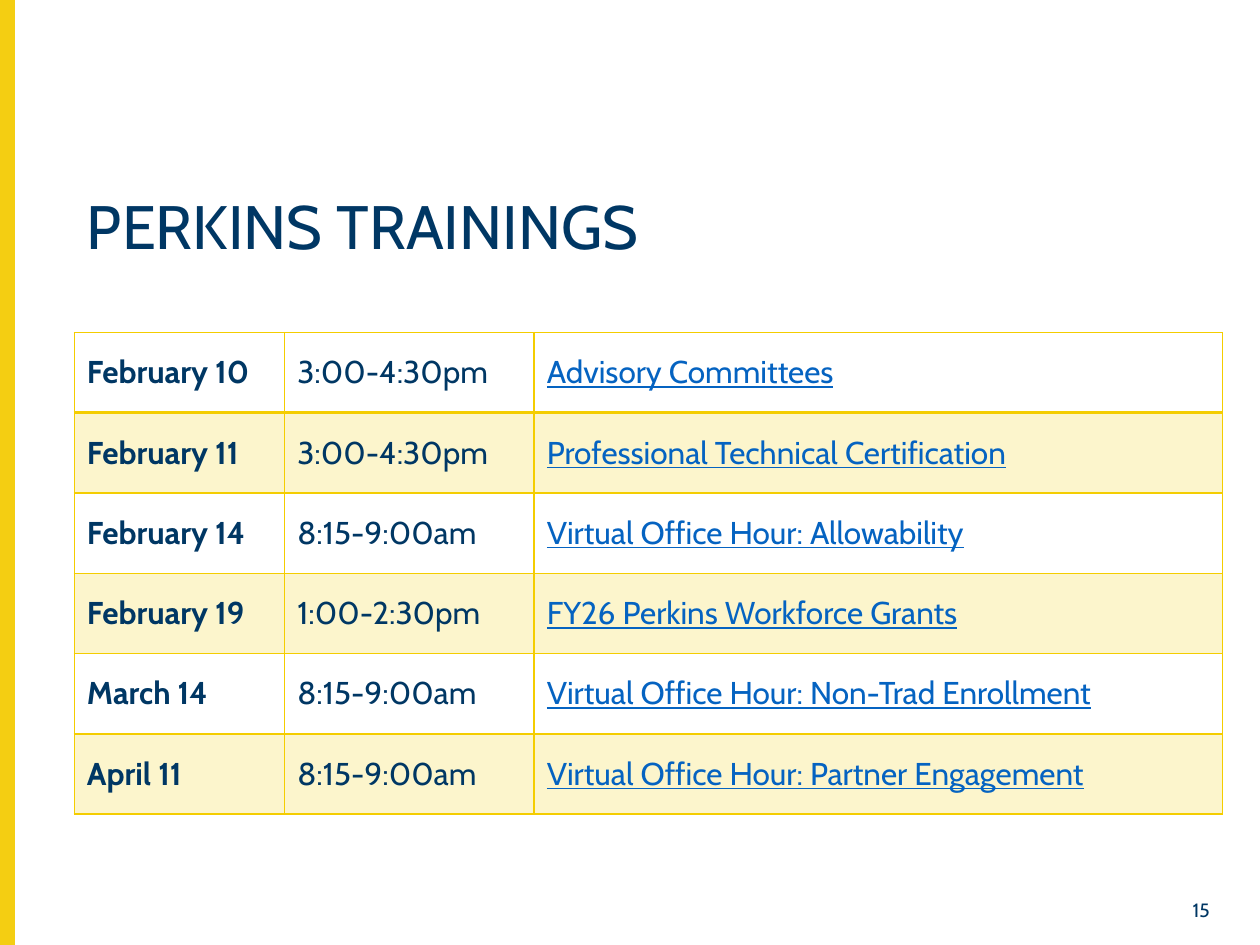
from lxml import etree
from pptx import Presentation
from pptx.dml.color import RGBColor
from pptx.enum import shapes, text
from pptx.oxml import ns
from pptx.util import Pt

FONT = "Cabin"
NAVY, YELLOW, LINK = "003764", "F4CD00", "0563C1"
TRAININGS = [
    ("February 10", "3:00-4:30pm", "Advisory Committees"),
    ("February 11", "3:00-4:30pm", "Professional Technical Certification"),
    ("February 14", "8:15-9:00am", "Virtual Office Hour: Allowability"),
    ("February 19", "1:00-2:30pm", "FY26 Perkins Workforce Grants"),
    ("March 14", "8:15-9:00am", "Virtual Office Hour: Non-Trad Enrollment"),
    ("April 11", "8:15-9:00am", "Virtual Office Hour: Partner Engagement"),
]
# Date, time and training columns: width, bold, underline, colour
COLUMNS = [
    (120.2, True, False, NAVY),
    (142.6, False, False, NAVY),
    (393.2, False, True, LINK),
]


def rgb(value):
    return RGBColor.from_string(value)


def add_run(p, words, size, color=NAVY, bold=False, underline=False):
    r = p.add_run()
    r.text = words
    r.font.name, r.font.size = FONT, Pt(size)
    r.font.bold, r.font.underline = bold, underline
    r.font.color.rgb = rgb(color)


def set_borders(cell, widths):
    """Draw yellow cell edges; widths are left, right, top, bottom."""
    tc_pr = cell._tc.get_or_add_tcPr()
    for i, (side, width) in enumerate(zip("LRTB", widths)):
        ln = etree.Element(ns.qn(f"a:ln{side}"), w=str(Pt(width)))
        fill = etree.SubElement(ln, ns.qn("a:solidFill"))
        etree.SubElement(fill, ns.qn("a:srgbClr"), val=YELLOW)
        tc_pr.insert(i, ln)


def set_tint(cell, percent):
    cell.fill.solid()
    cell.fill.fore_color.rgb = rgb(YELLOW)
    color = cell._tc.tcPr.find(".//" + ns.qn("a:srgbClr"))
    etree.SubElement(color, ns.qn("a:alpha"), val=str(percent * 1000))


def add_side_bar(slide, x, y, w, h):
    sp = slide.shapes.add_shape(
        shapes.MSO_SHAPE.RECTANGLE, Pt(x), Pt(y), Pt(w), Pt(h))
    sp.shadow.inherit = False
    sp.fill.solid()
    sp.fill.fore_color.rgb = sp.line.color.rgb = rgb("F4CE12")
    sp.line.width = Pt(1)


def add_title(slide, x, y, w, h):
    sp = slide.shapes.title
    sp.left, sp.top, sp.width, sp.height = Pt(x), Pt(y), Pt(w), Pt(h)
    tf = sp.text_frame
    tf.auto_size = text.MSO_AUTO_SIZE.NONE
    tf.vertical_anchor = text.MSO_ANCHOR.TOP
    p = tf.paragraphs[0]
    p.alignment = text.PP_ALIGN.LEFT
    p.line_spacing = 0.9
    add_run(p, "PERKINS TRAININGS", 35)


def add_trainings(slide, x, y, w, h):
    table = slide.shapes.add_table(
        len(TRAININGS), len(COLUMNS), Pt(x), Pt(y), Pt(w), Pt(h)).table
    table.first_row = table.horz_banding = False
    for column, (width, *_) in zip(table.columns, COLUMNS):
        column.width = Pt(width)

    for i, training in enumerate(TRAININGS):
        table.rows[i].height = Pt(h / len(TRAININGS))
        for j, (words, (_, bold, underline, color)) in enumerate(zip(training, COLUMNS)):
            cell = table.cell(i, j)
            cell.vertical_anchor = text.MSO_ANCHOR.MIDDLE
            # Every second row is tinted
            if i % 2:
                set_tint(cell, 20)
            else:
                cell.fill.background()
            # The rule under the first row is heavier
            set_borders(cell, (1, 1, 2 if i == 1 else 1, 2 if i == 0 else 1))
            add_run(cell.text_frame.paragraphs[0], words, 18, color, bold, underline)


def add_page_number(slide, x, y, w, h):
    tf = slide.shapes.add_textbox(Pt(x), Pt(y), Pt(w), Pt(h)).text_frame
    tf.word_wrap = True
    tf.vertical_anchor = text.MSO_ANCHOR.MIDDLE
    p = tf.paragraphs[0]
    p.alignment = text.PP_ALIGN.RIGHT
    add_run(p, "15", 11)


def main():
    prs = Presentation()
    prs.slide_width, prs.slide_height = Pt(720), Pt(540)
    slide = prs.slides.add_slide(prs.slide_layouts[5])
    add_side_bar(slide, 0, 0, 8, 540)
    add_title(slide, 42.5, 108.7, 656.6, 51.8)
    add_trainings(slide, 42.5, 190, 656, 275.2)
    add_page_number(slide, 661.7, 510.5, 36.7, 18.7)
    prs.save("out.pptx")


if __name__ == "__main__":
    main()
